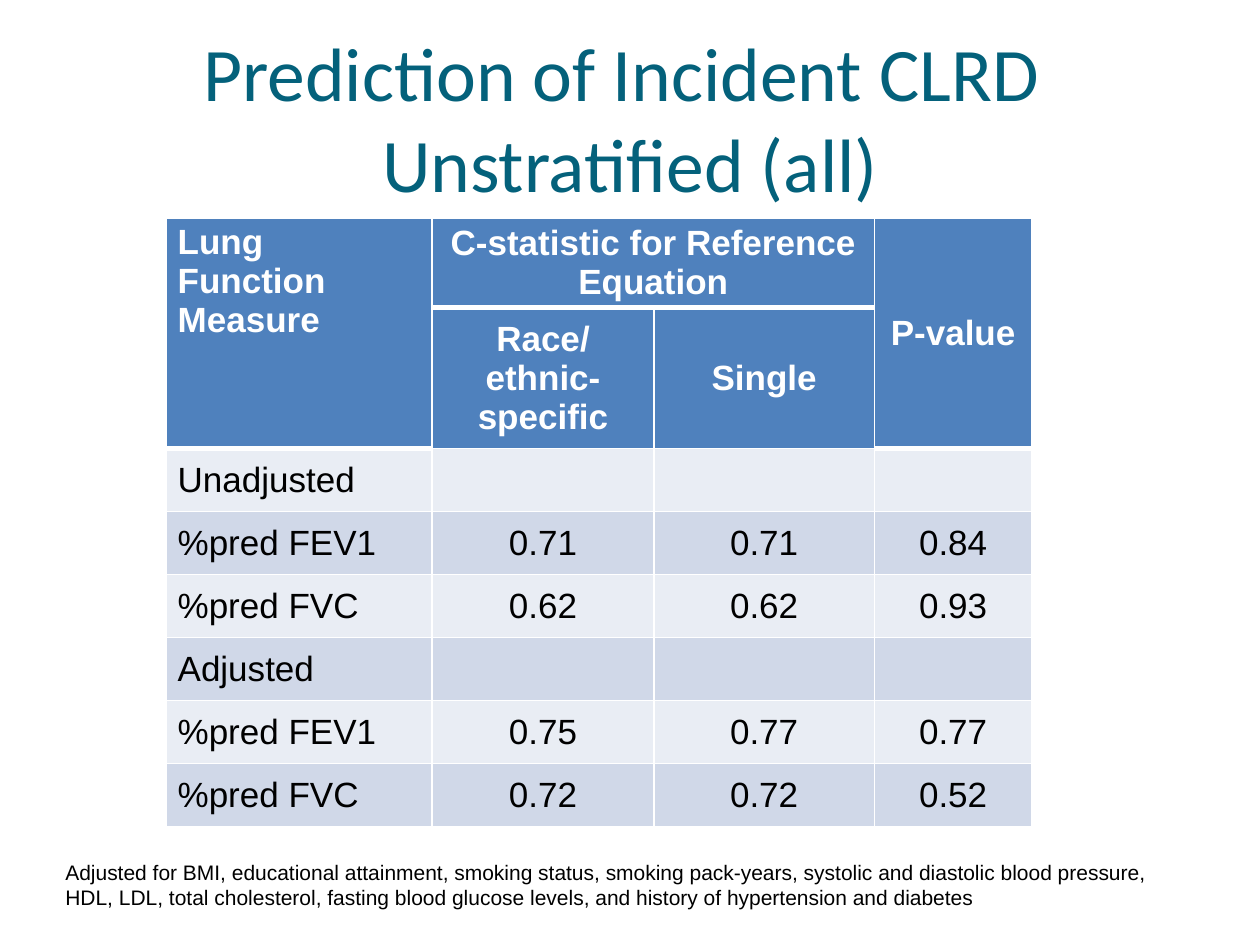
from dataclasses import dataclass

from lxml import etree
from pptx import Presentation
from pptx.dml.color import RGBColor
from pptx.enum.text import MSO_ANCHOR, PP_ALIGN
from pptx.oxml.ns import qn
from pptx.util import Inches, Pt

LEFT, CENTER = PP_ALIGN.LEFT, PP_ALIGN.CENTER
TOP, MIDDLE = MSO_ANCHOR.TOP, MSO_ANCHOR.MIDDLE
TITLE_ONLY = 5


@dataclass(frozen=True)
class Theme:
    title: str = "04617B"
    header: str = "4F81BD"
    bands: tuple = ("E9EDF4", "D0D8E8")
    white: str = "FFFFFF"
    black: str = "000000"
    title_font: str = "Calibri"
    body_font: str = "Arial"
    title_size: float = 43.2
    table_size: float = 20
    note_size: float = 12


T = Theme()
COLS = (2.11, 1.76, 1.75, 1.25)
ROWS = (0.71, 1.12) + (0.5,) * 6
HEADER_ROWS = 2
HEADER = [
    ["Lung Function Measure", "C-statistic for Reference Equation", "", "P-value"],
    ["", "Race/ethnic-specific", "Single", ""],
]
BODY = [
    ["Unadjusted", "", "", ""],
    ["%pred FEV1", "0.71", "0.71", "0.84"],
    ["%pred FVC", "0.62", "0.62", "0.93"],
    ["Adjusted", "", "", ""],
    ["%pred FEV1", "0.75", "0.77", "0.77"],
    ["%pred FVC", "0.72", "0.72", "0.52"],
]
# Header cells that span: first and last (row, column)
MERGES = [((0, 0), (1, 0)), ((0, 1), (0, 2)), ((0, 3), (1, 3))]
NOTE = ("Adjusted for BMI, educational attainment, smoking status, smoking "
        "pack-years, systolic and diastolic blood pressure, HDL, LDL, total "
        "cholesterol, fasting blood glucose levels, and history of "
        "hypertension and diabetes")


def write(tf, text, align, color, **font):
    tf.text = text
    p = tf.paragraphs[0]
    p.alignment = align
    for r in p.runs:
        for name, value in font.items():
            setattr(r.font, name, value)
        r.font.color.rgb = RGBColor.from_string(color)


def add_title(s, text):
    sp = s.shapes.title
    sp.left, sp.top, sp.width, sp.height = map(Inches, (0.5, 0.3, 9, 1.25))
    sp.text_frame.vertical_anchor = MIDDLE
    write(sp.text_frame, text, CENTER, T.title,
          name=T.title_font, size=Pt(T.title_size))


def add_note(s, text):
    sp = s.shapes.add_textbox(*map(Inches, (0.42, 6.77, 8.88, 0.5)))
    sp.text_frame.word_wrap = True
    write(sp.text_frame, text, LEFT, T.black,
          name=T.body_font, size=Pt(T.note_size))


def border(cell, side, width):
    ln = etree.SubElement(cell._tc.get_or_add_tcPr(), qn(f"a:{side}"),
                          w=str(Pt(width)))
    fill = etree.SubElement(ln, qn("a:solidFill"))
    etree.SubElement(fill, qn("a:srgbClr"), val=T.white)


def format_cell(cell, text, row, col):
    is_header = row < HEADER_ROWS
    # A thick rule closes the top header row and the tall header cells
    thick = row == 0 or (is_header and col in (0, len(COLS) - 1))
    border(cell, "lnR", 1)
    border(cell, "lnB", 3 if thick else 1)
    cell.fill.solid()
    band = T.header if is_header else T.bands[row % 2]
    cell.fill.fore_color.rgb = RGBColor.from_string(band)
    cell.margin_left = cell.margin_right = Inches(0.09)
    cell.margin_top = cell.margin_bottom = Inches(0.04)
    cell.vertical_anchor = TOP if is_header and col == 0 else MIDDLE
    write(cell.text_frame, text, CENTER if col else LEFT,
          T.white if is_header else T.black,
          name=T.body_font, size=Pt(T.table_size), bold=is_header)


def add_results(s):
    frame = s.shapes.add_table(len(ROWS), len(COLS), Inches(1.32), Inches(1.73),
                               Inches(sum(COLS)), Inches(sum(ROWS)))
    table = frame.table
    table.first_row = table.horz_banding = False
    for column, width in zip(table.columns, COLS):
        column.width = Inches(width)
    for row, height in zip(table.rows, ROWS):
        row.height = Inches(height)
    for i, texts in enumerate(HEADER + BODY):
        for j, text in enumerate(texts):
            format_cell(table.cell(i, j), text, i, j)
    for first, last in MERGES:
        table.cell(*first).merge(table.cell(*last))


def main():
    prs = Presentation()
    prs.slide_width, prs.slide_height = Inches(10), Inches(7.5)
    s = prs.slides.add_slide(prs.slide_layouts[TITLE_ONLY])
    add_title(s, "Prediction of Incident CLRD \vUnstratified (all)")
    add_results(s)
    add_note(s, NOTE)
    prs.save("out.pptx")


if __name__ == "__main__":
    main()
